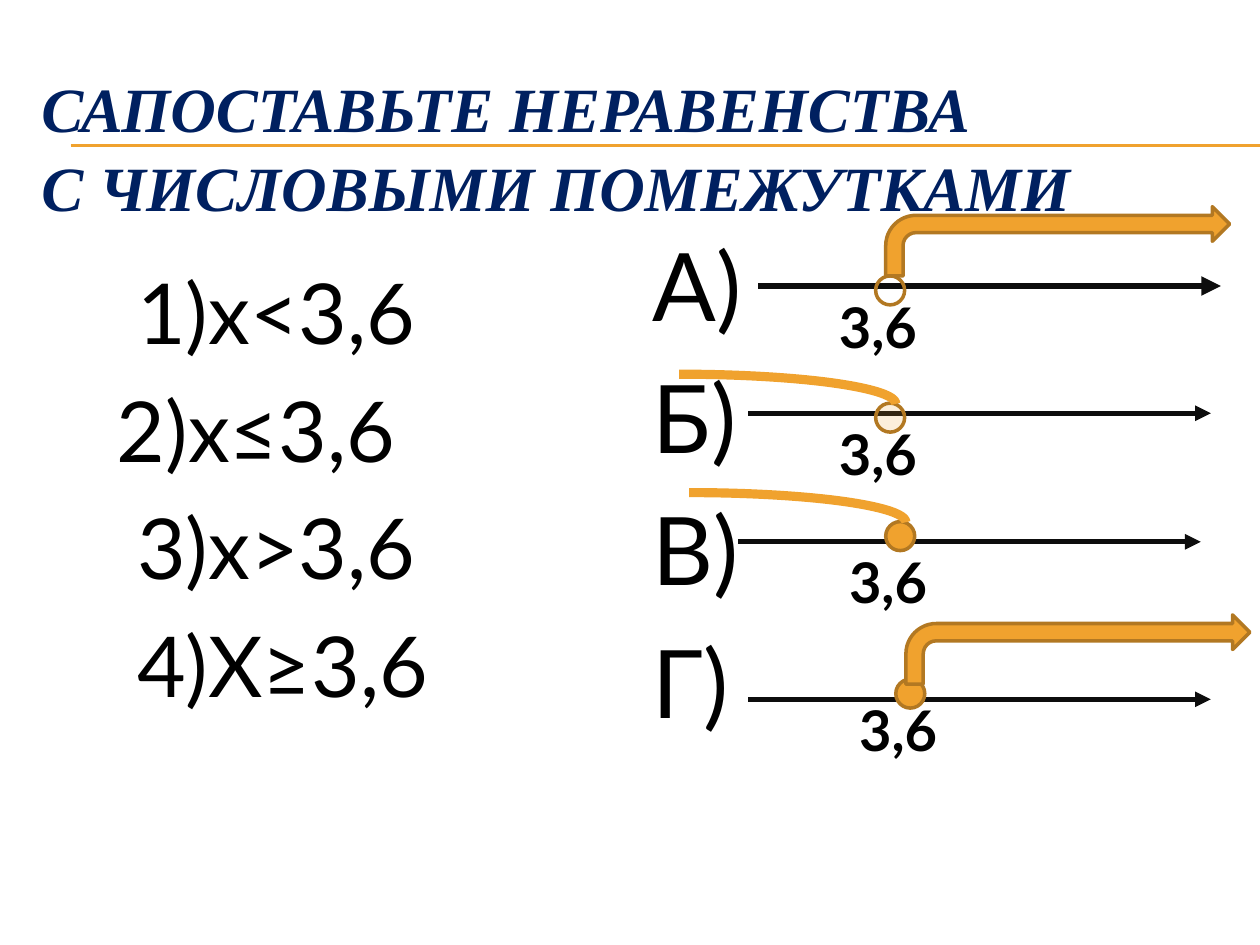
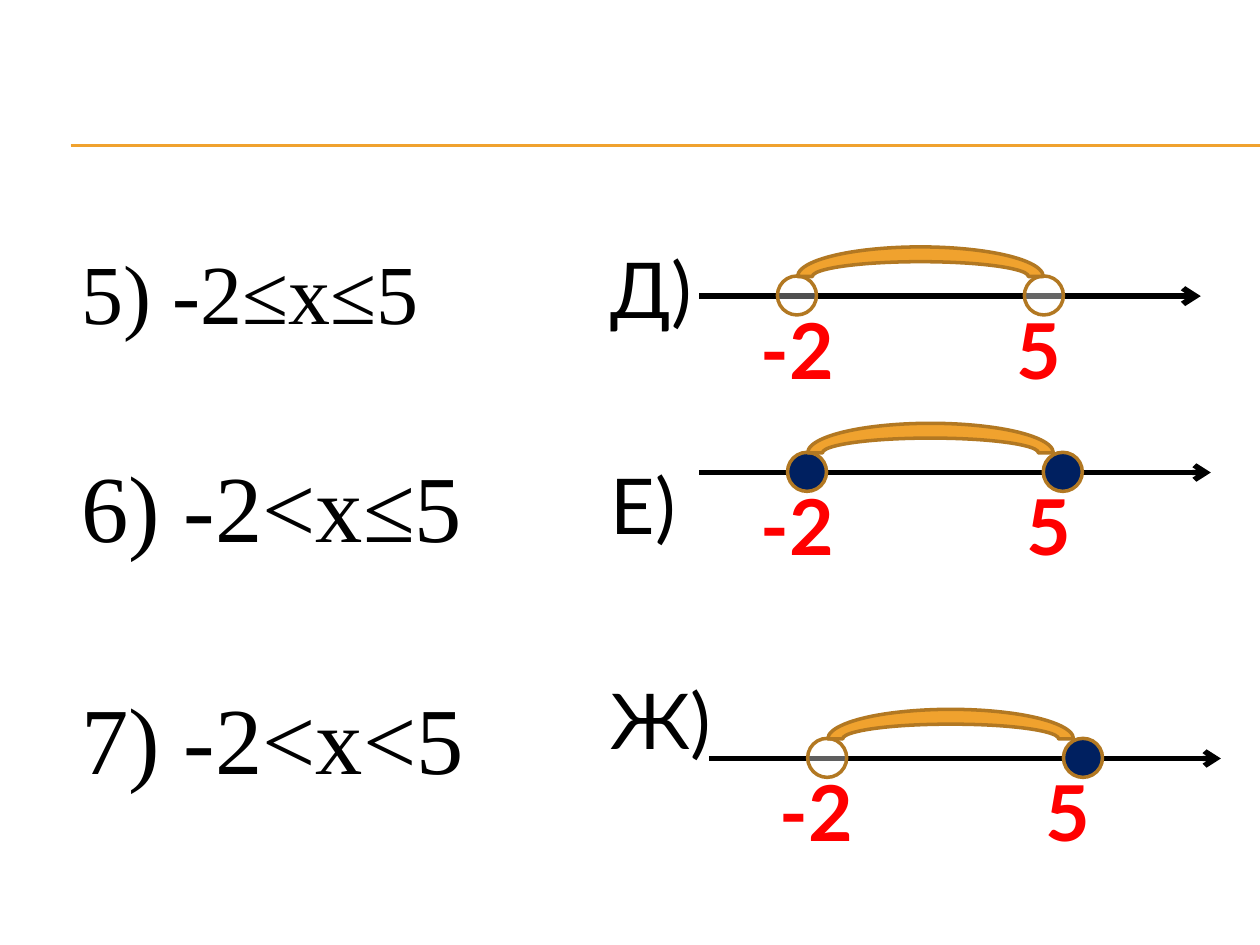
from dataclasses import dataclass

import pptx
import pptx.dml.color
import pptx.enum.shapes
import pptx.enum.text
import pptx.oxml
import pptx.oxml.ns
import pptx.util
from lxml import etree

Inches = pptx.util.Inches
Pt = pptx.util.Pt
SHAPE = pptx.enum.shapes.MSO_SHAPE


# Colours, fonts and type sizes
@dataclass(frozen=True)
class Theme:
    gold: str = "F0A22E"
    bronze: str = "B27822"
    navy: str = "002060"
    black: str = "000000"
    soft_black: str = "0D0D0D"
    red: str = "FF0000"
    white: str = "FFFFFF"
    sans: str = "Lato"
    serif: str = "Times New Roman"
    title_size: int = 36
    inequality_size: int = 48
    double_size: int = 54
    answer_size: int = 54
    answer_size_small: int = 44
    bound_size: int = 32
    bound_size_large: int = 44


THEME = Theme()
DOT, BIG_DOT = 0.23, 0.31
RAY_AXIS_LENGTH = 3.67


@dataclass
class Line:
    """One line of a text column; gap is the space before it in points."""
    text: str
    size: int
    gap: float = 0
    indent: float = 0


@dataclass
class Ray:
    """Number line with one bound and a ray to the left or right."""
    axis_x: float
    axis_y: float
    dot_x: float
    dot_y: float
    bound_y: float
    fill: str | None
    opacity: int
    to_right: bool
    rise: float
    weight: float = 3


@dataclass
class Interval:
    """Number line with two bounds joined by an arch."""
    axis_x: float
    axis_end: float
    axis_y: float
    dots_x: tuple
    bounds_x: tuple
    fills: tuple
    opacities: tuple
    weight: float = 3


# Elements
def rgb(code):
    return pptx.dml.color.RGBColor.from_string(code)


def add_child(parent, tag, **attributes):
    child = etree.SubElement(parent, pptx.oxml.ns.qn(tag))
    for key, value in attributes.items():
        child.set(key, str(value))
    return child


def add_text(slide, box, lines, font, color, bold=False, italic=False):
    text_box = slide.shapes.add_textbox(*map(Inches, box))
    frame = text_box.text_frame
    frame.word_wrap = True
    frame.text = "\n".join(line.text for line in lines)
    for paragraph, line in zip(frame.paragraphs, lines):
        paragraph.space_before = Pt(line.gap)
        if line.indent:
            paragraph._p.get_or_add_pPr().set("marL", str(Inches(line.indent)))
        for run in paragraph.runs:
            run.font.name = font
            run.font.size = Pt(line.size)
            run.font.bold = bold
            run.font.italic = italic
            run.font.color.rgb = rgb(color)


def add_line(slide, x1, y1, x2, y2, color, weight, arrowhead=None):
    line = slide.shapes.add_connector(
        pptx.enum.shapes.MSO_CONNECTOR.STRAIGHT,
        Inches(x1), Inches(y1), Inches(x2), Inches(y2))
    line.line.color.rgb = rgb(color)
    line.line.width = Pt(weight)
    if arrowhead:
        add_child(line.line._get_or_add_ln(), "a:tailEnd", type=arrowhead)
    add_child(line._element.spPr, "a:effectLst")


def add_figure(slide, preset, box, fill, opacity=100,
               outline=THEME.bronze, weight=2):
    figure = slide.shapes.add_shape(preset, *map(Inches, box))
    figure.shadow.inherit = False
    figure.line.color.rgb = rgb(outline)
    figure.line.width = Pt(weight)
    if fill is None:
        figure.fill.background()
        return
    figure.fill.solid()
    figure.fill.fore_color.rgb = rgb(fill)
    if opacity < 100:
        color = figure._element.spPr.find(".//" + pptx.oxml.ns.qn("a:srgbClr"))
        add_child(color, "a:alpha", val=opacity * 1000)


def add_bound(slide, x, y, width, height, text, size, color):
    add_text(slide, (x, y, width, height), [Line(text, size)],
             THEME.sans, color, bold=True)


def add_ray(slide, ray):
    add_line(slide, ray.axis_x, ray.axis_y, ray.axis_x + RAY_AXIS_LENGTH,
             ray.axis_y, THEME.soft_black, ray.weight, "triangle")
    add_figure(slide, SHAPE.OVAL, (ray.dot_x, ray.dot_y, DOT, DOT),
               ray.fill, ray.opacity)
    add_bound(slide, ray.dot_x - 0.39, ray.bound_y, 1.2, 0.64, "3,6",
              THEME.bound_size, THEME.black)
    if ray.to_right:
        add_figure(slide, SHAPE.BENT_ARROW,
                   (ray.dot_x + 0.08, ray.dot_y - ray.rise, 2.73, 0.55),
                   THEME.gold)
    else:
        add_figure(slide, SHAPE.ARC,
                   (ray.dot_x - 3.28, ray.dot_y - ray.rise, 3.44, 0.47),
                   None, outline=THEME.gold, weight=5.25)


def add_interval(slide, interval):
    y = interval.axis_y
    add_line(slide, interval.axis_x, y, interval.axis_end, y,
             THEME.black, interval.weight, "arrow")
    for dot_x, bound_x, bound, fill, opacity in zip(
            interval.dots_x, interval.bounds_x, ("-2", "5"),
            interval.fills, interval.opacities):
        add_figure(slide, SHAPE.OVAL, (dot_x, y - 0.16, BIG_DOT, BIG_DOT),
                   fill, opacity)
        add_bound(slide, bound_x, y, 0.86, 0.84, bound,
                  THEME.bound_size_large, THEME.red)
    add_figure(slide, SHAPE.BLOCK_ARC,
               (interval.dots_x[0] + 0.16, y - 0.39, 1.95, 0.47), THEME.gold)


def new_slide(deck):
    slide = deck.slides.add_slide(deck.slide_layouts[6])
    for y in (1.15, 1.16):
        add_line(slide, 0.56, y, 10, y, THEME.gold, 0.75)
    return slide


# Slides
def build_rays(deck):
    slide = new_slide(deck)
    add_text(slide, (0.23, 0.5, 9.5, 1.25),
             [Line("САПОСТАВЬТЕ НЕРАВЕНСТВА", THEME.title_size),
              Line("С ЧИСЛОВЫМИ ПОМЕЖУТКАМИ", THEME.title_size, 2)],
             THEME.serif, THEME.navy, bold=True, italic=True)

    inequalities = (("1)х<3,6", 0.64), ("2)х≤3,6", 0.48),
                    ("3)х>3,6", 0.64), ("4)Х≥3,6", 0.64))
    size = THEME.inequality_size
    add_text(slide, (0.35, 2.02, 4.58, 5.17),
             [Line(text, size, size * 0.2, indent)
              for text, indent in inequalities], THEME.sans, THEME.black)
    size = THEME.answer_size
    add_text(slide, (5.08, 1.75, 4.75, 5.17),
             [Line(letter + ")", size, size * 0.2) for letter in "АБВГ"],
             THEME.sans, THEME.black)

    gold = THEME.gold
    for ray in (
            Ray(6.02, 2.27, 6.95, 2.19, 2.27, None, 100, True, 0.55, 3.75),
            Ray(5.94, 3.28, 6.95, 3.2, 3.28, gold, 17, False, 0.23),
            Ray(5.86, 4.3, 7.03, 4.14, 4.3, gold, 100, False, 0.23),
            Ray(5.94, 5.55, 7.11, 5.39, 5.47, gold, 100, True, 0.51)):
        add_ray(slide, ray)


def build_intervals(deck):
    slide = new_slide(deck)
    size = THEME.answer_size_small
    add_text(slide, (4.45, 1.87, 4.99, 5.17),
             [Line(letter + ")", size, size * 1.6, 0.3) for letter in "ДЕЖ"],
             THEME.sans, THEME.black)
    add_text(slide, (0.55, 1.86, 5, 4.44),
             [Line("5) -2≤х≤5", THEME.inequality_size),
              Line("6) -2<х≤5", THEME.double_size, 61),
              Line("7) -2<х<5", THEME.double_size, 67.5)],
             THEME.serif, THEME.black)

    white, navy = THEME.white, THEME.navy
    for interval in (
            Interval(5.55, 9.53, 2.35, (6.17, 8.13), (5.94, 7.97),
                     (white, white), (31, 40), 3.25),
            Interval(5.55, 9.61, 3.75, (6.25, 8.28), (5.94, 8.05),
                     (navy, navy), (100, 100)),
            Interval(5.63, 9.69, 6.02, (6.41, 8.44), (6.09, 8.2),
                     (white, navy), (37, 100))):
        add_interval(slide, interval)


def main():
    deck = pptx.Presentation()
    deck.slide_width = Inches(10)
    deck.slide_height = Inches(7.5)
    build_rays(deck)
    build_intervals(deck)
    deck.save("out.pptx")


if __name__ == "__main__":
    main()
